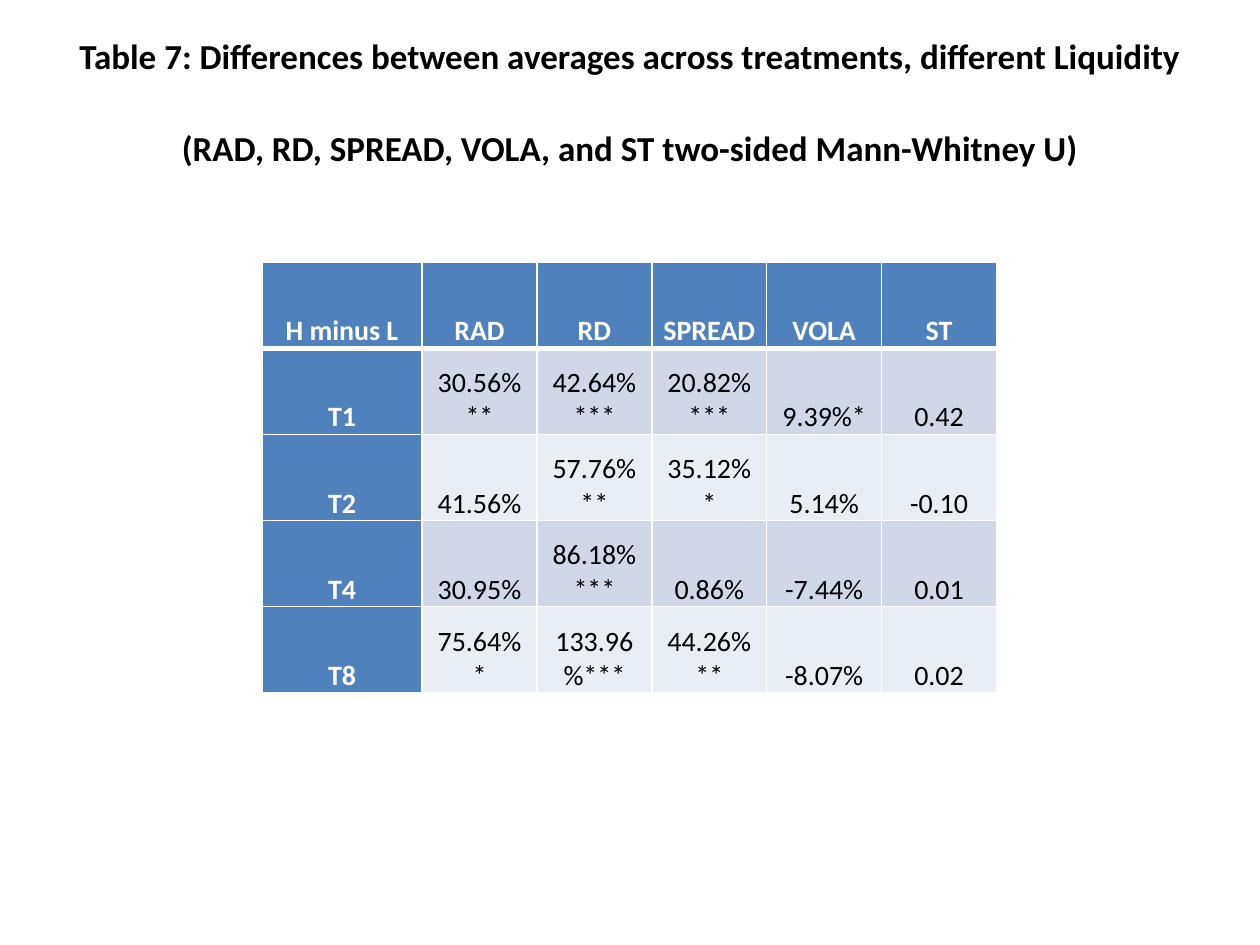
from dataclasses import dataclass

from lxml import etree
from pptx import Presentation
from pptx.dml.color import RGBColor
from pptx.enum.text import MSO_ANCHOR, PP_ALIGN
from pptx.oxml.ns import qn
from pptx.util import Inches, Pt

CENTER = PP_ALIGN.CENTER
MIDDLE, BOTTOM = MSO_ANCHOR.MIDDLE, MSO_ANCHOR.BOTTOM
SLIDE_W, SLIDE_H = Inches(10), Inches(7.5)

TITLE = [
    "Table 7: Differences between averages across treatments, different Liquidity",
    "(RAD, RD, SPREAD, VOLA, and ST two-sided Mann-Whitney U)",
]
ROWS = [
    ["H minus L", "RAD", "RD", "SPREAD", "VOLA", "ST"],
    ["T1", "30.56%**", "42.64%***", "20.82%***", "9.39%*", "0.42"],
    ["T2", "41.56%", "57.76%**", "35.12%*", "5.14%", "-0.10"],
    ["T4", "30.95%", "86.18%***", "0.86%", "-7.44%", "0.01"],
    ["T8", "75.64%*", "133.96%***", "44.26%**", "-8.07%", "0.02"],
]


@dataclass(frozen=True)
class Theme:
    """Colours, font and type sizes of the slide."""
    font: str = "Calibri"
    text: str = "000000"
    header_text: str = "FFFFFF"
    header: str = "4F81BD"
    bands: tuple = ("D0D8E8", "E9EDF4")
    border: str = "FFFFFF"
    title_size: int = 20
    cell_size: int = 16
    line: int = 1
    heavy_line: int = 3


THEME = Theme()


def add_run(p, text, size, color, bold):
    """Add one formatted run to a centred paragraph."""
    p.alignment = CENTER
    r = p.add_run()
    r.text = text
    r.font.name, r.font.size, r.font.bold = THEME.font, Pt(size), bold
    r.font.color.rgb = RGBColor.from_string(color)


def add_title(s, lines):
    """Add the title, one spaced paragraph a line."""
    sp = s.shapes.add_textbox(
        int(SLIDE_W * 0.05), int(SLIDE_H * 0.04), int(SLIDE_W * 0.9), Inches(1.25))
    tf = sp.text_frame
    tf.word_wrap = True
    tf.vertical_anchor = MIDDLE
    tf.margin_bottom = Inches(0.29)
    for i, line in enumerate(lines):
        p = tf.add_paragraph() if i else tf.paragraphs[0]
        p.space_before = Pt(29 if i else 0)
        add_run(p, line, THEME.title_size, THEME.text, True)


def set_borders(cell, top, bottom):
    """Draw the four borders of a cell, ahead of its fill."""
    tc_pr = cell._tc.get_or_add_tcPr()
    widths = {"L": THEME.line, "R": THEME.line, "T": top, "B": bottom}
    for i, (side, width) in enumerate(widths.items()):
        ln = etree.Element(qn(f"a:ln{side}"), w=str(Pt(width)))
        fill = etree.SubElement(ln, qn("a:solidFill"))
        etree.SubElement(fill, qn("a:srgbClr"), val=THEME.border)
        tc_pr.insert(i, ln)


def fill_cell(cell, text, row, col):
    """Write and style a cell by its place in the table."""
    header = row == 0 or col == 0
    cell.vertical_anchor = BOTTOM
    cell.margin_left = cell.margin_right = Inches(0.07)
    cell.margin_top = cell.margin_bottom = 0
    cell.fill.solid()
    fill = THEME.header if header else THEME.bands[(row - 1) % 2]
    cell.fill.fore_color.rgb = RGBColor.from_string(fill)
    set_borders(cell, THEME.heavy_line if row == 1 else THEME.line,
                THEME.heavy_line if row == 0 else THEME.line)
    color = THEME.header_text if header else THEME.text
    add_run(cell.text_frame.paragraphs[0], text, THEME.cell_size, color, header)


def add_results(s, rows):
    """Add the table with a wide first column and equal others."""
    width, height, first = Inches(5.83), Inches(3.42), Inches(1.27)
    table = s.shapes.add_table(
        len(rows), len(rows[0]), Inches(2.08), Inches(2.08), width, height).table
    for i, column in enumerate(table.columns):
        column.width = (width - first) // (len(rows[0]) - 1) if i else first
    for i, values in enumerate(rows):
        table.rows[i].height = height // len(rows)
        for j, value in enumerate(values):
            fill_cell(table.cell(i, j), value, i, j)


def main():
    """Build and save the slide."""
    prs = Presentation()
    prs.slide_width, prs.slide_height = SLIDE_W, SLIDE_H
    s = prs.slides.add_slide(prs.slide_layouts[6])
    add_title(s, TITLE)
    add_results(s, ROWS)
    prs.save("out.pptx")


if __name__ == "__main__":
    main()
